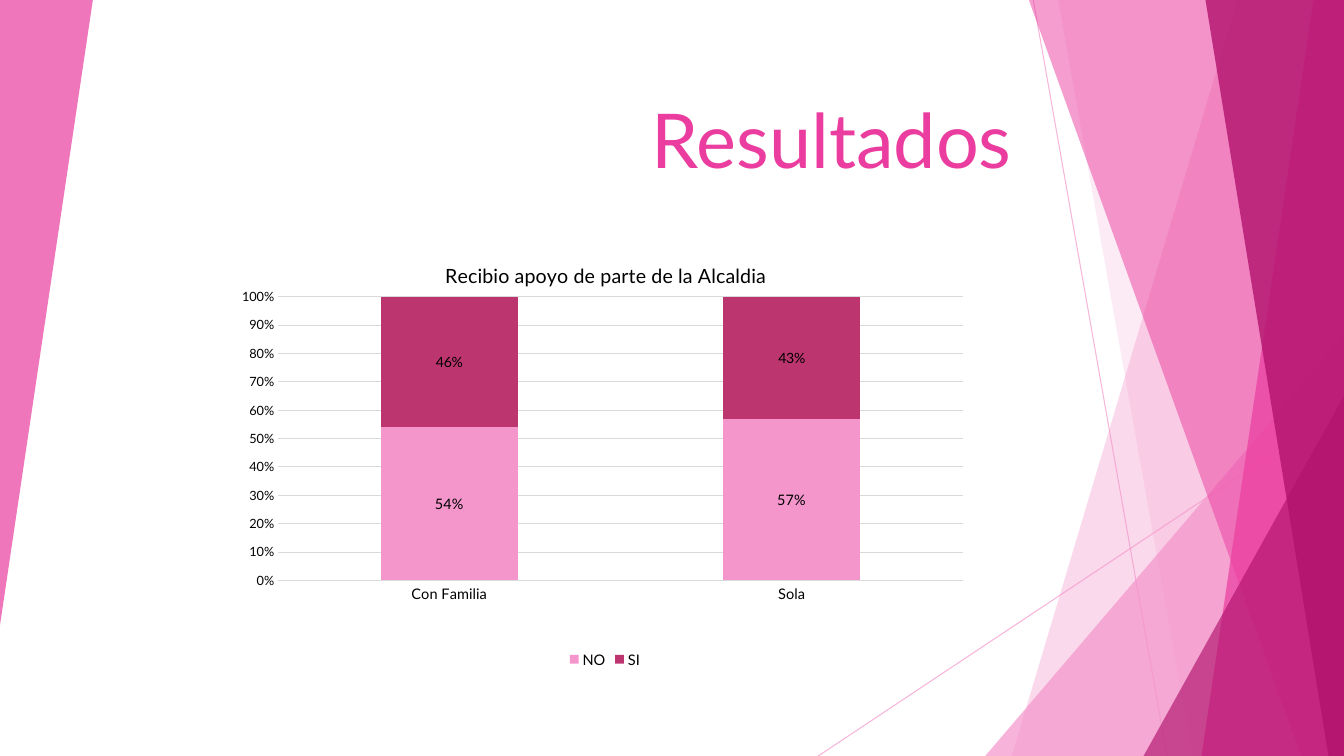
from lxml import etree
from pptx import Presentation
from pptx import util as u
from pptx.chart import data as chart_data
from pptx.dml import color as dml
from pptx.enum import chart as chart_enum
from pptx.enum import shapes, text
from pptx.oxml import ns

COLORS = {
    "paper": "FFFFFF",
    "light": "F496CB",
    "bright": "EB3D9F",
    "deep": "B2136D",
    "bar": "BC356F",
    "text": "000000",
    "grid": "D9D9D9",
}
FONT = "Lato"
SLIDE_BOX = (0, 0, 33.87, 19.05)
TITLE_BOX = (4.19, 0.18, 21.56, 4.57)
CHART_BOX = (5.44, 5.94, 19.61, 11.0)

# Decoration: lines (x1, y1, x2, y2), bands (top x, bottom x), triangles (width, height)
LINES = [(26.04, 0, 29.41, 19.05), (33.87, 10.24, 20.62, 19.05)]
RIGHT_PARTS = [
    ("band", 31.19, 25.5, "light", 36),
    ("band", 26.67, 30.05, "light", 20),
    ("triangle", 9.04, 10.59, "light", 72),
    ("band", 25.93, 32.79, "bright", 50),
    ("band", 33.1, 30.28, "bright", 70),
    ("band", 30.38, 33.48, "deep", 80),
    ("triangle", 5.05, 9.07, "deep", 66),
]

CATEGORIES = ["Con Familia", "Sola"]
SERIES = [
    ("NO", (0.54, 0.57), "light", 10.3),
    ("SI", (0.46, 0.43), "bar", 10.1),
]


def rgb(name):
    return dml.RGBColor.from_string(COLORS[name])


def apply(target, values):
    for name, value in values.items():
        setattr(target, name, value)


def style_font(font, size, color="text"):
    apply(font, {"name": FONT, "size": u.Pt(size), "bold": False})
    font.color.rgb = rgb(color)


def set_opacity(shape, percent):
    for color in shape.element.spPr.iter(ns.qn("a:srgbClr")):
        etree.SubElement(color, ns.qn("a:alpha"), val=str(percent * 1000))


def style_facet(shape, color, opacity):
    shape.shadow.inherit = False
    shape.fill.solid()
    shape.fill.fore_color.rgb = rgb(color)
    shape.line.fill.background()
    set_opacity(shape, opacity)


def add_triangle(group, left, top, width, height, color, opacity):
    triangle = group.shapes.add_shape(
        shapes.MSO_SHAPE.ISOSCELES_TRIANGLE,
        u.Cm(left), u.Cm(top), u.Cm(width), u.Cm(height))
    triangle.adjustments[0] = 1
    style_facet(triangle, color, opacity)
    return triangle


def add_decoration(slide, box):
    left, top, width, height = box
    right, bottom = left + width, top + height
    group = slide.shapes.add_group_shape()

    # Thin crossing lines
    for x1, y1, x2, y2 in LINES:
        line = group.shapes.add_connector(
            shapes.MSO_CONNECTOR.STRAIGHT,
            u.Cm(left + x1), u.Cm(top + y1), u.Cm(left + x2), u.Cm(top + y2))
        line.line.color.rgb = rgb("light")
        line.line.width = u.Pt(0.75)
        set_opacity(line, 70)
        etree.SubElement(line.element.spPr, ns.qn("a:effectLst"))

    # Bands and triangles against the right edge
    for kind, first, second, color, opacity in RIGHT_PARTS:
        if kind == "triangle":
            add_triangle(group, right - first, bottom - second,
                         first, second, color, opacity)
            continue
        builder = group.shapes.build_freeform(u.Cm(left + first), u.Cm(top))
        corners = [(right, top), (right, bottom), (left + second, bottom)]
        builder.add_line_segments([(u.Cm(x), u.Cm(y)) for x, y in corners])
        style_facet(builder.convert_to_shape(), color, opacity)

    # Left wedge, pointing down
    add_triangle(group, left, top, 2.34, 15.75, "bright", 70).rotation = 180


def add_title(slide, box):
    left, top, width, height = map(u.Cm, box)
    title = slide.shapes.title
    apply(title, {"left": left, "top": top, "width": width, "height": height})
    apply(title.text_frame, {
        "text": "Resultados",
        "word_wrap": True,
        "auto_size": text.MSO_AUTO_SIZE.NONE,
        "vertical_anchor": text.MSO_ANCHOR.BOTTOM,
    })
    paragraph = title.text_frame.paragraphs[0]
    paragraph.alignment = text.PP_ALIGN.RIGHT
    style_font(paragraph.runs[0].font, 54, "bright")


def set_layout(parent, index, values):
    layout = parent.find(ns.qn("c:layout"))
    if layout is None:
        layout = etree.Element(ns.qn("c:layout"))
        parent.insert(index, layout)
    manual = etree.SubElement(layout, ns.qn("c:manualLayout"))
    for name, value in values.items():
        etree.SubElement(manual, ns.qn("c:" + name), val=str(value))


def add_support_chart(slide, box):
    data = chart_data.CategoryChartData(number_format="0%")
    data.categories = CATEGORIES
    for name, values, _, _ in SERIES:
        data.add_series(name, values)
    chart = slide.shapes.add_chart(
        chart_enum.XL_CHART_TYPE.COLUMN_STACKED_100, *map(u.Cm, box), data).chart
    style_font(chart.font, 10)

    # Title and plot positions
    frame = chart.chart_title.text_frame
    frame.text = "Recibio apoyo de parte de la Alcaldia"
    style_font(frame.paragraphs[0].runs[0].font, 14)
    set_layout(chart.chart_title.format.element if hasattr(chart.chart_title.format, "element")
               else chart.element.find(".//" + ns.qn("c:title")), 1,
               {"xMode": "edge", "yMode": "edge", "x": 0.29, "y": 0.05})
    set_layout(chart.element.find(".//" + ns.qn("c:plotArea")), 0, {
        "layoutTarget": "inner", "xMode": "edge", "yMode": "edge",
        "x": 0.08, "y": 0.14, "w": 0.88, "h": 0.65})

    # Axes
    for axis, size in ((chart.category_axis, 10.4), (chart.value_axis, 9.1)):
        apply(axis, {
            "major_tick_mark": chart_enum.XL_TICK_MARK.NONE,
            "minor_tick_mark": chart_enum.XL_TICK_MARK.NONE,
        })
        axis.format.line.fill.background()
        style_font(axis.tick_labels.font, size)
    apply(chart.value_axis, {
        "minimum_scale": 0, "maximum_scale": 1, "major_unit": 0.1,
        "has_major_gridlines": True})
    apply(chart.value_axis.tick_labels,
          {"number_format": "0%", "number_format_is_linked": False})
    gridline = chart.value_axis.major_gridlines.format.line
    gridline.color.rgb = rgb("grid")
    gridline.width = u.Pt(0.75)

    # Bars and their labels
    plot = chart.plots[0]
    apply(plot, {"gap_width": 150, "overlap": 100, "vary_by_categories": False})
    for series, (_, _, color, size) in zip(plot.series, SERIES):
        series.format.fill.solid()
        series.format.fill.fore_color.rgb = rgb(color)
        apply(series.data_labels, {
            "show_value": True, "number_format": "0%",
            "number_format_is_linked": False})
        style_font(series.data_labels.font, size)

    # Legend
    chart.has_legend = True
    apply(chart.legend, {
        "position": chart_enum.XL_LEGEND_POSITION.BOTTOM,
        "include_in_layout": False})
    style_font(chart.legend.font, 10.4)


def main():
    presentation = Presentation()
    presentation.slide_width = u.Cm(SLIDE_BOX[2])
    presentation.slide_height = u.Cm(SLIDE_BOX[3])
    slide = presentation.slides.add_slide(presentation.slide_layouts[5])
    slide.background.fill.solid()
    slide.background.fill.fore_color.rgb = rgb("paper")
    add_decoration(slide, SLIDE_BOX)
    add_title(slide, TITLE_BOX)
    add_support_chart(slide, CHART_BOX)
    presentation.save("out.pptx")


if __name__ == "__main__":
    main()
